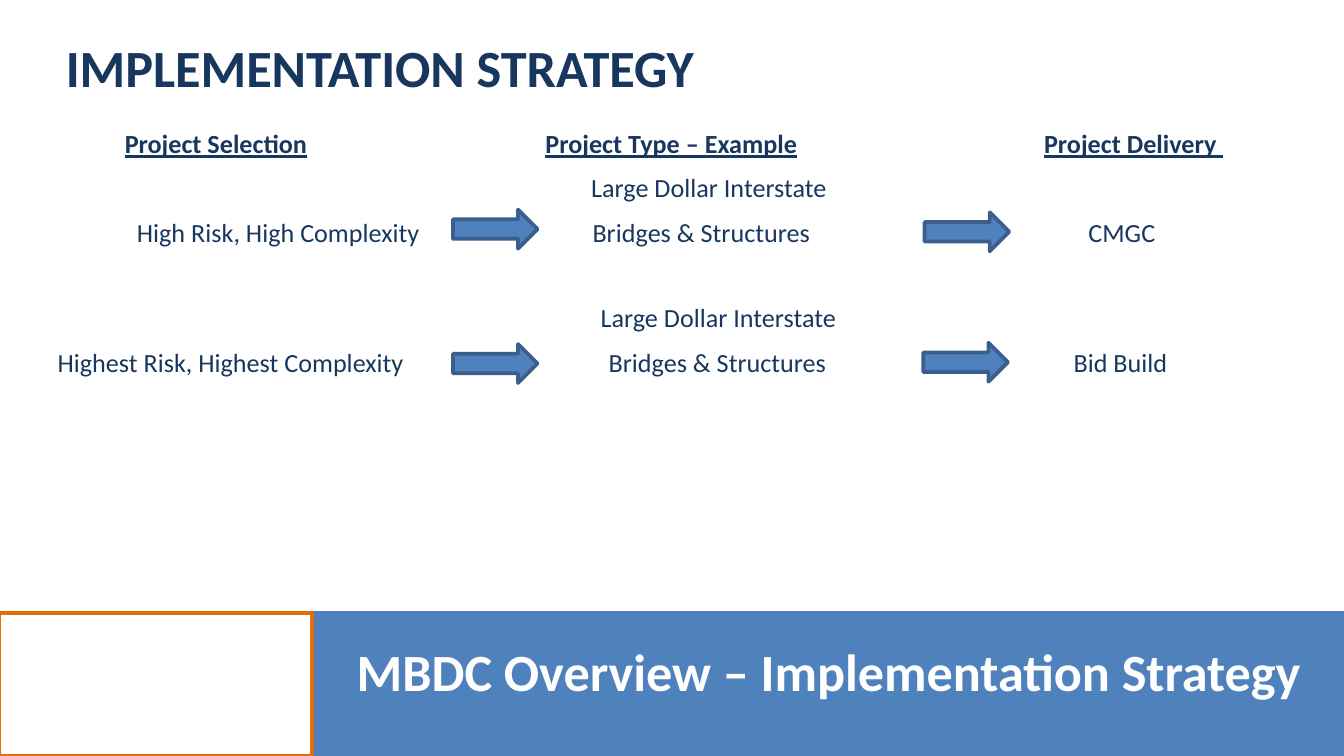
from dataclasses import dataclass

from lxml.etree import SubElement
from pptx import Presentation
from pptx.dml.color import RGBColor
from pptx.enum.shapes import MSO_SHAPE as Preset
from pptx.enum.text import MSO_ANCHOR as Anchor, PP_ALIGN as Align
from pptx.oxml.ns import qn
from pptx.util import Inches, Pt

SLIDE_WIDTH = 10
SLIDE_HEIGHT = SLIDE_WIDTH * 9 / 16


@dataclass(frozen=True)
class Theme:
    navy: str = "17375E"
    blue: str = "4F81BD"
    arrow_edge: str = "3A5F8C"
    orange: str = "E46C0A"
    white: str = "FFFFFF"
    font: str = "Calibri"
    heading: int = 28
    body: int = 14
    outline: int = 2


THEME = Theme()


def add_block(slide, preset, box, fill, edge):
    block = slide.shapes.add_shape(preset, *map(Inches, box))
    block.shadow.inherit = False
    block.fill.solid()
    block.fill.fore_color.rgb = RGBColor.from_string(fill)
    block.line.color.rgb = RGBColor.from_string(edge)
    block.line.width = Pt(THEME.outline)


def set_frame(frame, side, top, wrap=True):
    frame.word_wrap = wrap
    frame.vertical_anchor = Anchor.TOP
    frame.margin_left = frame.margin_right = Inches(side)
    frame.margin_top = frame.margin_bottom = Inches(top)


def add_run(paragraph, text, size, color, bold=False, underline=False):
    run = paragraph.add_run()
    run.text = text
    run.font.name = THEME.font
    run.font.size = Pt(size)
    run.font.color.rgb = RGBColor.from_string(color)
    run.font.bold = bold
    run.font.underline = underline


def add_tab_stops(paragraph, stops):
    tabs = SubElement(paragraph._p.get_or_add_pPr(), qn("a:tabLst"))
    for stop in stops:
        SubElement(tabs, qn("a:tab"), pos=str(Inches(stop)), algn="l")


def add_columns(slide, box, labels, stops, header=False):
    """Write the labels on one line, each after the first at its tab stop."""
    frame = slide.shapes.add_textbox(*map(Inches, box)).text_frame
    set_frame(frame, 0.1, 0.05)
    line = frame.paragraphs[0]
    add_tab_stops(line, stops)
    for index, label in enumerate(labels):
        if index:
            add_run(line, "\t", THEME.body, THEME.navy)
        add_run(line, label, THEME.body, THEME.navy, header, header)


def add_strategy_row(slide, box, labels, stops, arrows, example):
    """Place a project row; arrow and example offsets are from the box corner."""
    left, top = box[:2]
    add_columns(slide, box, labels, stops)
    for dx, dy in arrows:
        add_block(slide, Preset.RIGHT_ARROW, (left + dx, top + dy, 0.63, 0.29),
                  THEME.blue, THEME.arrow_edge)
    dx, dy = example
    example_box = (left + dx, top + dy, 2.02, 0.34)
    frame = slide.shapes.add_textbox(*map(Inches, example_box)).text_frame
    set_frame(frame, 0.1, 0.05, wrap=False)
    add_run(frame.paragraphs[0], "Large Dollar Interstate", THEME.body, THEME.navy)


def add_heading(slide, box, text):
    frame = slide.shapes.add_textbox(*map(Inches, box)).text_frame
    set_frame(frame, 0.07, 0.03)
    add_run(frame.paragraphs[0], text, THEME.heading, THEME.navy, bold=True)


def add_title_band(slide, box, text):
    left, top, width, height = box
    split = 2.33
    title_left = left + split
    title_width = width - split
    add_block(slide, Preset.RECTANGLE, (title_left, top, title_width, height),
              THEME.blue, THEME.blue)
    add_block(slide, Preset.RECTANGLE, (left - 0.01, top, split, height),
              THEME.white, THEME.orange)

    title = slide.shapes.title
    title.left, title.top = Inches(title_left), Inches(top + 0.17)
    title.width, title.height = Inches(title_width), Inches(0.75)
    set_frame(title.text_frame, 0.07, 0.03)
    line = title.text_frame.paragraphs[0]
    line.alignment = Align.CENTER
    add_run(line, text, THEME.heading, THEME.white, bold=True)
    slide.shapes._spTree.append(title._element)  # bring in front of the band


def main():
    deck = Presentation()
    deck.slide_width, deck.slide_height = Inches(SLIDE_WIDTH), Inches(SLIDE_HEIGHT)
    slide = deck.slides.add_slide(deck.slide_layouts[5])

    band_top = 4.56
    add_title_band(slide, (0, band_top, SLIDE_WIDTH, SLIDE_HEIGHT - band_top),
                   "MBDC Overview – Implementation Strategy")
    add_heading(slide, (0.42, 0.23, 7.67, 0.67), "IMPLEMENTATION STRATEGY")
    add_columns(slide, (0.83, 0.9, 9.42, 0.34),
                ("Project Selection", "Project Type – Example", "Project Delivery "),
                (3.13, 6.84), header=True)
    add_strategy_row(slide, (0.92, 1.56, 8.92, 0.34),
                     ("High Risk, High Complexity", "Bridges & Structures", "CMGC"),
                     (3.39, 7.08), ((2.45, 0), (5.96, 0.02)), (3.38, -0.33))
    add_strategy_row(slide, (0.33, 2.53, 9.01, 0.34),
                     ("Highest Risk, Highest Complexity", "Bridges & Structures", "Bid Build"),
                     (4.1, 7.56), ((3.04, 0.03), (6.54, 0.02)), (4.04, -0.34))
    deck.save("out.pptx")


if __name__ == "__main__":
    main()
